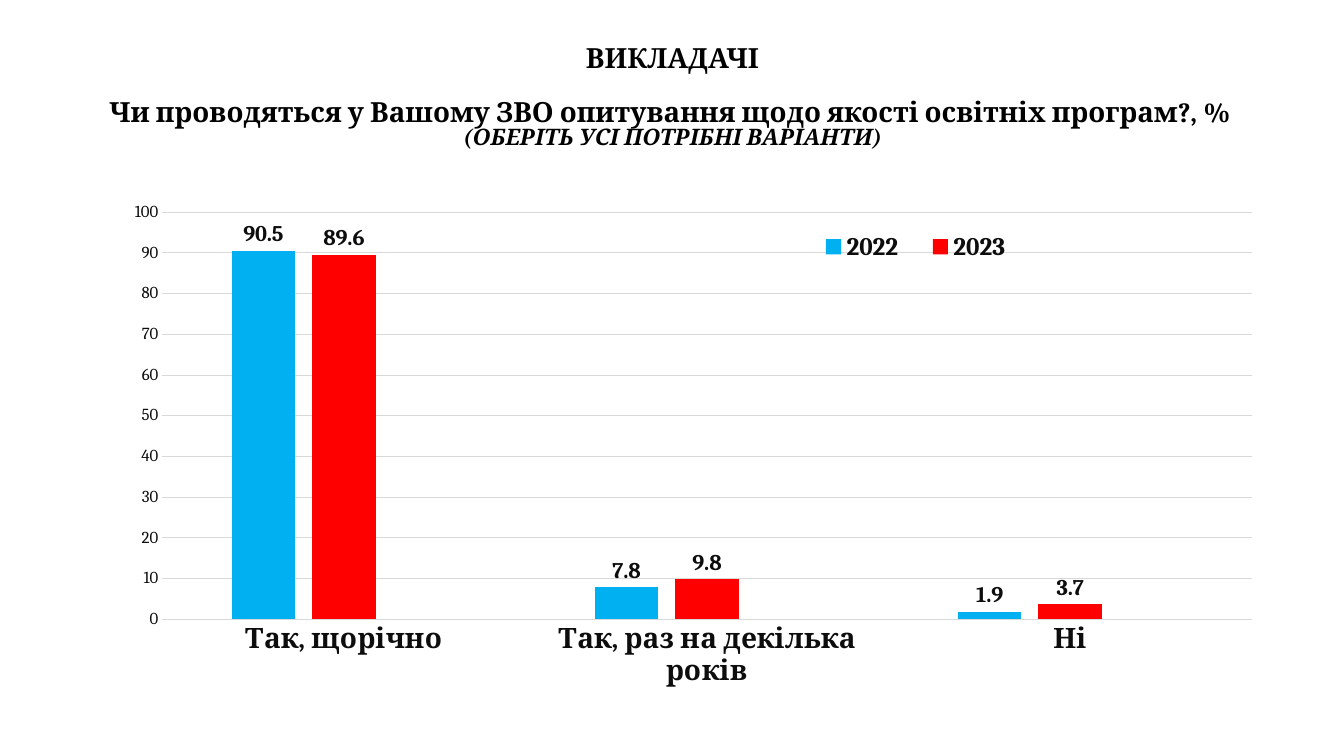
from dataclasses import dataclass
from typing import Optional

from lxml import etree
from pptx import Presentation
from pptx.chart.data import CategoryChartData
from pptx.dml.color import RGBColor
from pptx.enum.chart import XL_CHART_TYPE, XL_LABEL_POSITION, XL_LEGEND_POSITION, XL_TICK_MARK
from pptx.enum.text import MSO_ANCHOR, PP_ALIGN
from pptx.oxml.ns import qn
from pptx.util import Inches, Pt

COLUMNS = XL_CHART_TYPE.COLUMN_CLUSTERED
OUTSIDE_END = XL_LABEL_POSITION.OUTSIDE_END
BOTTOM = XL_LEGEND_POSITION.BOTTOM
NO_TICK = XL_TICK_MARK.NONE
MIDDLE = MSO_ANCHOR.MIDDLE
CENTER = PP_ALIGN.CENTER

BLACK = RGBColor(0x00, 0x00, 0x00)
INK = RGBColor(0x0D, 0x0D, 0x0D)
GRID = RGBColor(0xD9, 0xD9, 0xD9)
BLUE = RGBColor(0x00, 0xB0, 0xF0)
RED = RGBColor(0xFF, 0x00, 0x00)
GRAY = RGBColor(0xA5, 0xA5, 0xA5)
SERIF = "Cambria"

LEFT, WIDTH = Inches(0.92), Inches(11.5)


@dataclass(frozen=True)
class TitleLine:
    text: str
    size: float = 19.8
    italic: bool = False


@dataclass(frozen=True)
class YearSeries:
    name: str
    values: tuple[Optional[float], ...]
    color: RGBColor

    @property
    def has_data(self) -> bool:
        return any(value is not None for value in self.values)


TITLE_LINES = (
    TitleLine("ВИКЛАДАЧІ"),
    TitleLine(""),
    TitleLine("Чи проводяться у Вашому ЗВО опитування щодо якості освітніх програм?, % "),
    TitleLine("(ОБЕРІТЬ УСІ ПОТРІБНІ ВАРІАНТИ)", 16.2, True),
)
ANSWERS = ("Так, щорічно", "Так, раз на декілька років", "Ні")
# The empty third series keeps its place in each cluster
YEARS = (
    YearSeries("2022", (90.5, 7.8, 1.9), BLUE),
    YearSeries("2023", (89.6, 9.8, 3.7), RED),
    YearSeries("Series 3", (None, None, None), GRAY),
)


def set_font(font, size: float, color: RGBColor = INK, bold: bool = True,
             italic: bool = False) -> None:
    font.name = SERIF
    font.size = Pt(size)
    font.bold = bold
    font.italic = italic
    font.color.rgb = color


def set_layout(element, x: float, y: float, width: float, height: float,
               inner: bool = False) -> None:
    """Place a chart part by fractions of the chart area."""
    layout = element.find(qn("c:layout"))
    if layout is None:
        layout = etree.Element(qn("c:layout"))
        if inner:
            element.insert(0, layout)
        else:
            element.find(qn("c:overlay")).addprevious(layout)
    manual = etree.SubElement(layout, qn("c:manualLayout"))
    settings = [("layoutTarget", "inner")] if inner else []
    settings += [("xMode", "edge"), ("yMode", "edge"),
                 ("x", x), ("y", y), ("w", width), ("h", height)]
    for tag, value in settings:
        etree.SubElement(manual, qn(f"c:{tag}")).set("val", str(value))


def add_title(slide) -> None:
    title = slide.shapes.title
    title.left, title.top = LEFT, Inches(0.41)
    title.width, title.height = WIDTH, Inches(1.13)
    title.text_frame.vertical_anchor = MIDDLE
    title.text_frame.word_wrap = True
    paragraph = title.text_frame.paragraphs[0]
    paragraph.alignment = CENTER
    paragraph.line_spacing = 0.81
    set_font(paragraph.font, TITLE_LINES[0].size, BLACK)
    for index, line in enumerate(TITLE_LINES):
        if index:
            paragraph.add_line_break()
        if line.text:
            run = paragraph.add_run()
            run.text = line.text
            set_font(run.font, line.size, BLACK, italic=line.italic)


def format_axes(chart) -> None:
    category_axis, value_axis = chart.category_axis, chart.value_axis
    for axis in (category_axis, value_axis):
        axis.major_tick_mark = axis.minor_tick_mark = NO_TICK
    set_font(category_axis.tick_labels.font, 20)
    set_font(value_axis.tick_labels.font, 12, bold=False)
    value_axis.minimum_scale, value_axis.maximum_scale = 0, 100
    value_axis.major_unit = 10
    value_axis.format.line.fill.background()
    for line in (category_axis.format.line, value_axis.major_gridlines.format.line):
        line.color.rgb = GRID
        line.width = Pt(0.75)


def format_series(plot) -> None:
    plot.gap_width, plot.overlap = 219, -27
    plot.vary_by_categories = False
    for series, year in zip(plot.series, YEARS):
        series.format.fill.solid()
        series.format.fill.fore_color.rgb = year.color
        if year.has_data:
            labels = series.data_labels
            labels.show_value = True
            labels.position = OUTSIDE_END
            set_font(labels.font, 16)


def format_legend(chart) -> None:
    chart.has_legend = True
    legend = chart.legend
    legend.position = BOTTOM
    legend.include_in_layout = False
    set_font(legend.font, 18)
    legend_element = chart.element.find(f".//{qn('c:legend')}")
    set_layout(legend_element, 0.61, 0.05, 0.2, 0.07)
    # Only series with values are listed
    position = legend_element.find(qn("c:legendPos"))
    for index, year in enumerate(YEARS):
        if not year.has_data:
            entry = etree.Element(qn("c:legendEntry"))
            etree.SubElement(entry, qn("c:idx")).set("val", str(index))
            etree.SubElement(entry, qn("c:delete")).set("val", "1")
            position.addnext(entry)


def add_survey_chart(slide) -> None:
    data = CategoryChartData()
    data.categories = ANSWERS
    for year in YEARS:
        data.add_series(year.name, year.values)
    chart = slide.shapes.add_chart(
        COLUMNS, LEFT, Inches(2), WIDTH, Inches(5.28), data).chart
    chart.has_title = False
    set_font(chart.font, 10, BLACK, bold=False)
    format_axes(chart)
    format_series(chart.plots[0])
    format_legend(chart)
    plot_area = chart.element.find(f".//{qn('c:plotArea')}")
    set_layout(plot_area, 0.06, 0.02, 0.94, 0.765, inner=True)


def main() -> None:
    presentation = Presentation()
    presentation.slide_width = Inches(13.33)
    presentation.slide_height = Inches(7.5)
    slide = presentation.slides.add_slide(presentation.slide_layouts[5])
    add_title(slide)
    add_survey_chart(slide)
    presentation.save("out.pptx")


if __name__ == "__main__":
    main()
